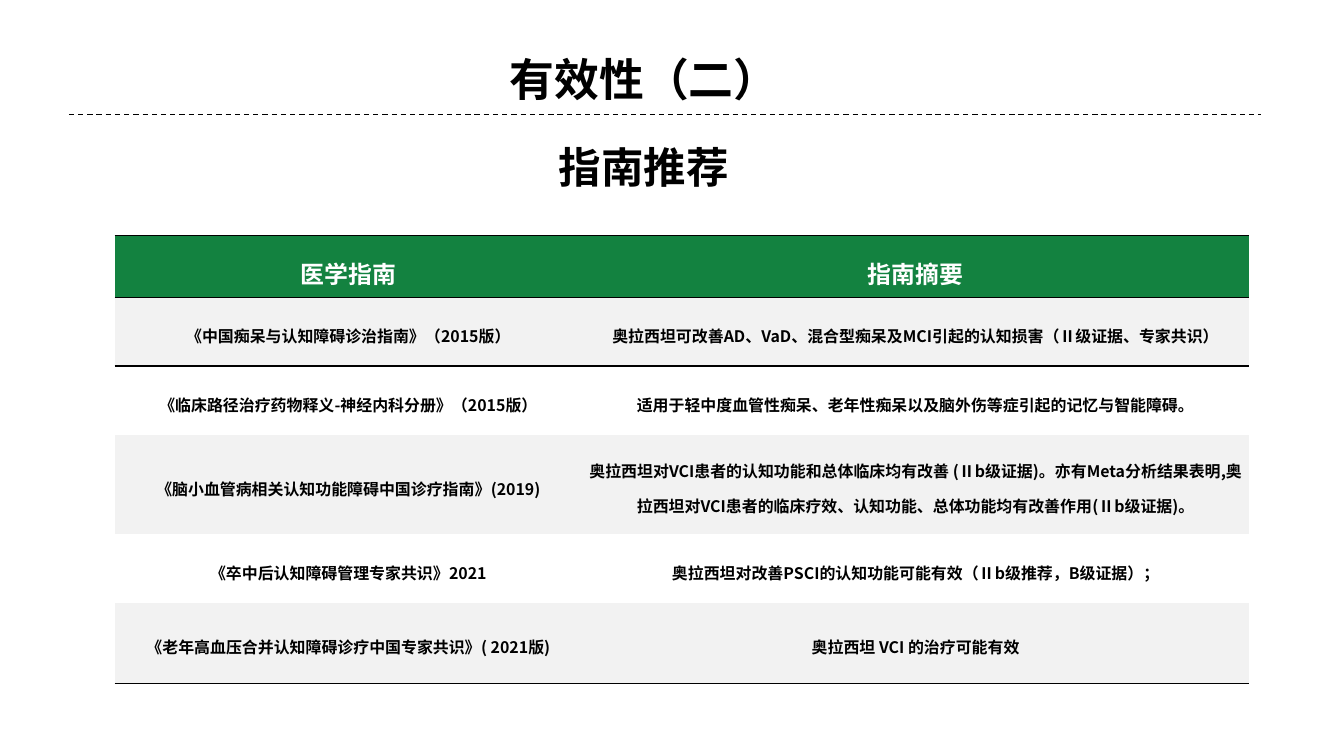
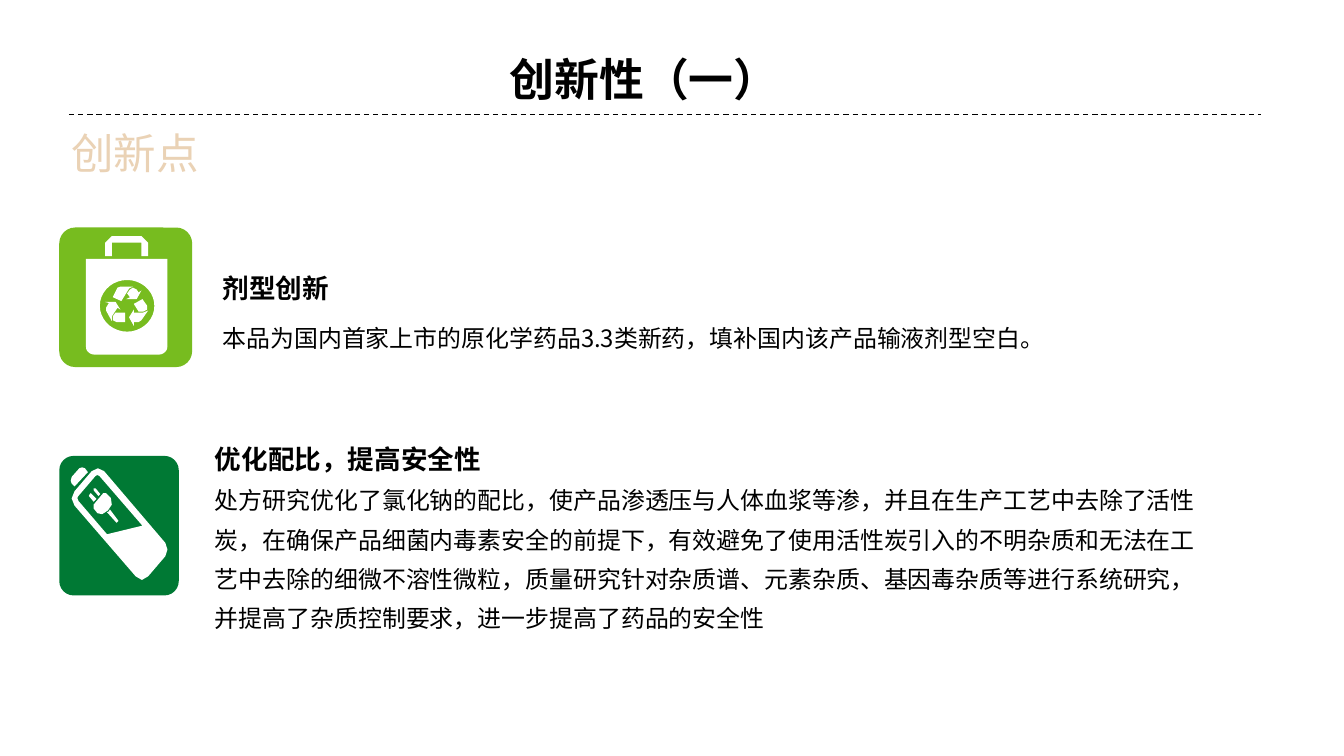
from math import cos, radians, sin

from lxml.etree import SubElement
from pptx import Presentation
from pptx.dml.color import RGBColor
from pptx.enum.dml import MSO_LINE
from pptx.enum.shapes import MSO_CONNECTOR, MSO_SHAPE
from pptx.enum.text import MSO_ANCHOR, MSO_AUTO_SIZE, PP_ALIGN
from pptx.oxml import parse_xml
from pptx.oxml.ns import nsdecls, qn
from pptx.util import Inches, Pt

WIDE, HIGH = Inches(14.06), Inches(7.91)
FONT = "Noto Sans CJK SC"
INK = {
    "text": "000000", "white": "FFFFFF", "head": "138240", "band": "F2F2F2",
    "sand": "EAD2B5", "edge": "CA8F45", "lime": "77BC1F", "pine": "007934",
}
NO_STYLE = "{2D5ABB26-0587-4C30-8999-92F81FD0307C}"
COLS = (34.78, 49.64)
ROWS = (8.22, 9.1, 9.1, 13.15, 9.1, 10.62)
GUIDES = (
    ("医学指南", "指南摘要"),
    ("《中国痴呆与认知障碍诊治指南》（2015版）",
     "奥拉西坦可改善AD、VaD、混合型痴呆及MCI引起的认知损害（Ⅱ级证据、专家共识）"),
    ("《临床路径治疗药物释义-神经内科分册》（2015版）",
     "适用于轻中度血管性痴呆、老年性痴呆以及脑外伤等症引起的记忆与智能障碍。"),
    ("《脑小血管病相关认知功能障碍中国诊疗指南》(2019)",
     "奥拉西坦对VCI患者的认知功能和总体临床均有改善 (Ⅱb级证据)。亦有Meta分析结果表明,"
     "奥拉西坦对VCI患者的临床疗效、认知功能、总体功能均有改善作用(Ⅱb级证据)。"),
    ("《卒中后认知障碍管理专家共识》2021",
     "奥拉西坦对改善PSCI的认知功能可能有效（Ⅱb级推荐，B级证据）；"),
    ("《老年高血压合并认知障碍诊疗中国专家共识》( 2021版)",
     "奥拉西坦 VCI 的治疗可能有效"),
)


def arc(x, y, rx, ry, start, end, step=10):
    return [(x + rx * cos(radians(a)), y + ry * sin(radians(a)))
            for a in range(start, end + 1, step)]


BAG = (
    [(48, 30), (48, 16), (55, 9), (86, 9), (93, 16), (93, 30), (86, 30),
     (86, 16), (55, 16), (55, 30)],
    [(28, 33), (113, 33), *arc(104, 125, 9, 8, 0, 90), *arc(37, 125, 9, 8, 90, 180)],
    arc(71, 82, 28.5, 27, 0, 350),
    [(78, 89), (88, 89), (93, 87), (86, 97), (83, 99), (78, 99), (78, 103),
     (73, 94), (78, 86)],
    [(92, 86), (88, 88), (83, 88), (78, 80), (87, 75), (92, 82)],
    [(56, 73), (61, 63), (64, 62), (77, 62), (73, 64), (65, 77)],
    [(81, 65), (83, 68), (86, 66), (81, 75), (70, 75), (74, 73), (71, 69),
     (74, 65), (77, 63)],
    [(56, 97), (56, 93), (59, 89), (69, 89), (69, 99), (60, 99)],
    [(61, 84), (55, 93), (55, 98), (49, 87), (49, 84), (52, 79), (48, 78),
     (59, 78), (64, 86)],
)
CELL = (
    [(16, 52), (13, 44.5), (16, 37), (34, 16), (40.5, 13), (47, 16), (111, 91),
     (113.2, 98), (111, 105), (93, 126), (86.5, 129.8), (80, 126)],
    [(50, 82), (87, 73), (42, 21), (40, 20), (38, 21), (20, 42), (19, 44), (20, 47)],
    [(60, 70), (50, 59), (52, 58), (53, 56), (62, 68)],
    [(41, 42), (36, 36), (36, 34), (38, 34), (43, 40)],
    [(36, 48), (31, 42), (32, 40), (33, 39), (39, 45)],
    [(46, 39), (49, 39), (54, 44), (55, 51), (51, 57), (45, 61), (40, 60),
     (36, 55), (36, 51)],
    [(13, 29), (12, 26), (13, 22), (21, 13), (24, 12), (27, 13), (30, 17), (16, 32)],
)


def hue(name):
    return RGBColor.from_string(INK[name])


def box(left, top, width, height):
    return (round(WIDE * left / 100), round(HIGH * top / 100),
            round(WIDE * width / 100), round(HIGH * height / 100))


def style(para, size, bold=False, ink="text", align=PP_ALIGN.LEFT, gap=None):
    para.alignment = align
    if gap:
        para.line_spacing = gap
    font = para.font
    font.size, font.bold, font.name = Pt(size), bold, FONT
    font.color.rgb = hue(ink)
    props = para._p.pPr.find(qn("a:defRPr"))
    SubElement(props, qn("a:ea"), typeface=FONT)
    return props


def note(slide, area, lines):
    frame = slide.shapes.add_textbox(*area).text_frame
    frame.word_wrap = True
    for i, (text, look) in enumerate(lines):
        para = frame.add_paragraph() if i else frame.paragraphs[0]
        para.text = text
        style(para, **look)
    return frame


def start(deck, text):
    slide = deck.slides.add_slide(deck.slide_layouts[5])
    title = slide.shapes.title
    title.left, title.top, title.width, title.height = box(37.13, 6.19, 22.83, 8.98)
    frame = title.text_frame
    frame.text = text
    frame.auto_size = MSO_AUTO_SIZE.NONE
    frame.vertical_anchor = MSO_ANCHOR.TOP
    frame.word_wrap = False
    frame.margin_left = frame.margin_right = Inches(0.11)
    style(frame.paragraphs[0], 33.8, True)
    left, top, width, _ = box(5.12, 15.17, 88.69, 0)
    rule = slide.shapes.add_connector(MSO_CONNECTOR.STRAIGHT, left, top, left + width, top)
    rule.line.color.rgb = hue("text")
    rule.line.width = Pt(1)
    rule.line.dash_style = MSO_LINE.DASH
    SubElement(rule._element.spPr, qn("a:effectLst"))
    return slide


def edge(cell, side):
    line = parse_xml(
        f'<a:ln{side} {nsdecls("a")} w="12700"><a:solidFill>'
        f'<a:srgbClr val="{INK["text"]}"/></a:solidFill></a:ln{side}>')
    cell._tc.get_or_add_tcPr().insert(0, line)


def grid(slide, area):
    table = slide.shapes.add_table(len(ROWS), len(COLS), *area).table
    table._tbl.tblPr.find(qn("a:tableStyleId")).text = NO_STYLE
    table.first_row = table.horz_banding = False
    for col, share in zip(table.columns, COLS):
        col.width = round(WIDE * share / 100)
    for r, (row, share) in enumerate(zip(table.rows, ROWS)):
        row.height = round(HIGH * share / 100)
        for cell, text in zip(row.cells, GUIDES[r]):
            cell.text = text
            cell.vertical_anchor = MSO_ANCHOR.MIDDLE
            cell.margin_left = cell.margin_right = cell.margin_top = Inches(0.01)
            cell.margin_bottom = Inches(0.05)
            style(cell.text_frame.paragraphs[0], 12 if r else 18, True,
                  "text" if r else "white", PP_ALIGN.CENTER, 1.5)
            if r % 2 or r == 0 or r == len(ROWS) - 1:
                cell.fill.solid()
                cell.fill.fore_color.rgb = hue("band" if r else "head")
            else:
                cell.fill.background()
            if r in (0, len(ROWS) - 1):
                edge(cell, "B")
            if r in (0, 1):
                edge(cell, "T")


def paint(shape, ink):
    shape.shadow.inherit = False
    shape.fill.solid()
    shape.fill.fore_color.rgb = hue(ink)
    shape.line.fill.background()


def badge(slide, area, ink, span, loops):
    tile = slide.shapes.add_shape(MSO_SHAPE.ROUNDED_RECTANGLE, *area)
    tile.adjustments[0] = 0.12
    paint(tile, ink)
    left, top, width, height = area
    fine = [[(x * 10, y * 10) for x, y in loop] for loop in loops]
    pen = slide.shapes.build_freeform(
        *fine[0][0], scale=(width / span[0] / 10, height / span[1] / 10))
    for i, loop in enumerate(fine):
        if i:
            pen.move_to(*loop[0])
        pen.add_line_segments(loop[1:], close=True)
    paint(pen.convert_to_shape(left, top), "white")


def guide(deck):
    slide = start(deck, "有效性（二）")
    note(slide, box(8.53, 18.08, 78.73, 8.09),
         [("指南推荐", dict(size=32, bold=True, align=PP_ALIGN.CENTER))])
    grid(slide, box(8.53, 31.1, sum(COLS), sum(ROWS)))


def novel(deck):
    slide = start(deck, "创新性（一）")
    frame = note(slide, box(4.62, 16.18, 44.31, 6.57),
                 [("创新点", dict(size=32, ink="sand"))])
    props = frame.paragraphs[0]._p.pPr.find(qn("a:defRPr"))
    props.insert(0, parse_xml(
        f'<a:ln {nsdecls("a")} w="22225"><a:solidFill>'
        f'<a:srgbClr val="{INK["edge"]}"/></a:solidFill></a:ln>'))
    badge(slide, box(4.41, 30.09, 9.89, 18.46), "lime", (139, 146), BAG)
    badge(slide, box(4.41, 60.3, 8.89, 18.46), "pine", (125, 146), CELL)
    note(slide, box(15.86, 33.12, 71.41, 11.38), [
        ("剂型创新", dict(size=20, bold=True, gap=Pt(36.6))),
        ("本品为国内首家上市的原化学药品3.3类新药，填补国内该产品输液剂型空白。",
         dict(size=18, gap=Pt(36.6))),
    ])
    note(slide, box(15.29, 58.03, 75.18, 28.7), [
        ("优化配比，提高安全性", dict(size=20, bold=True)),
        ("处方研究优化了氯化钠的配比，使产品渗透压与人体血浆等渗，并且在生产工艺中去除了活性炭，"
         "在确保产品细菌内毒素安全的前提下，有效避免了使用活性炭引入的不明杂质和无法在工艺中去除的"
         "细微不溶性微粒，质量研究针对杂质谱、元素杂质、基因毒杂质等进行系统研究，"
         "并提高了杂质控制要求，进一步提高了药品的安全性",
         dict(size=18, gap=Pt(29.6))),
    ])


def main():
    deck = Presentation()
    deck.slide_width, deck.slide_height = WIDE, HIGH
    guide(deck)
    novel(deck)
    deck.save("out.pptx")


if __name__ == "__main__":
    main()
